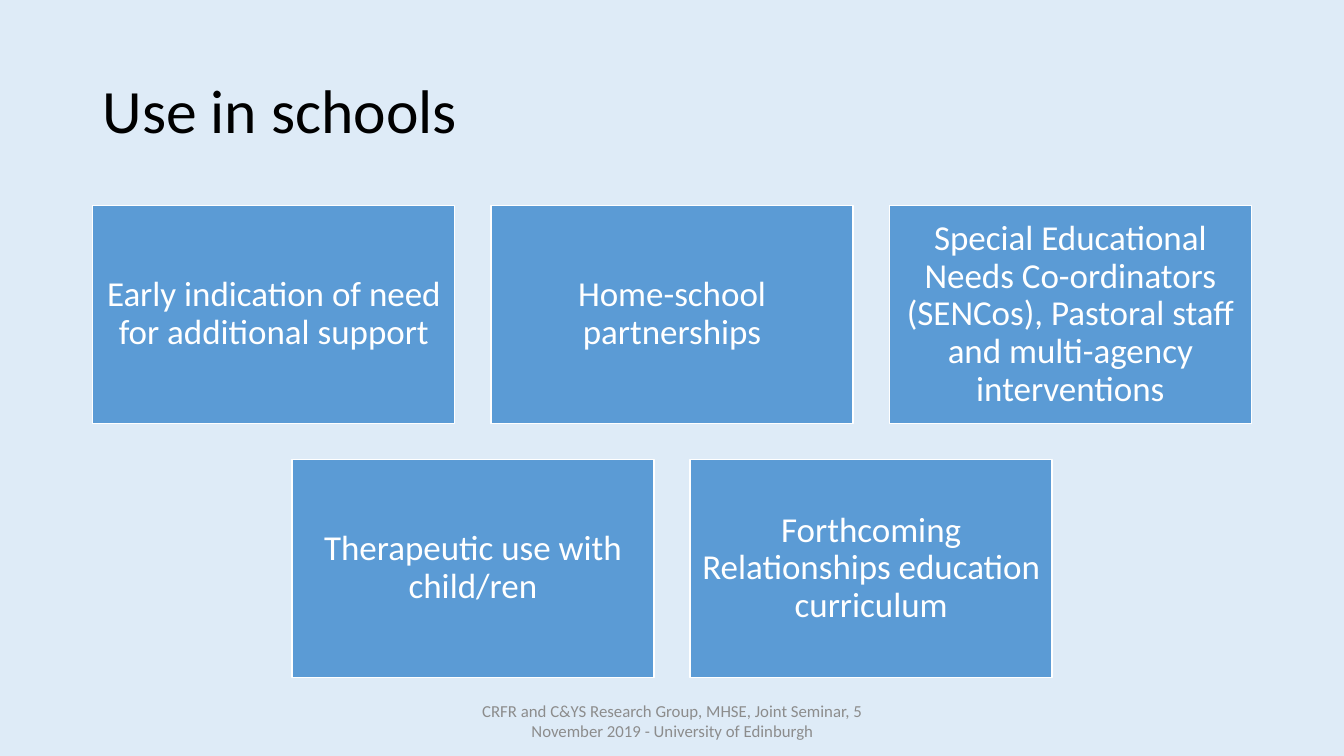
from pptx import Presentation
from pptx.dml.color import RGBColor
from pptx.enum.shapes import MSO_SHAPE
from pptx.enum.text import MSO_ANCHOR, PP_ALIGN
from pptx.util import Inches, Pt

WIDTH, HEIGHT = 13.33, 7.5
CARD_WIDTH, CARD_HEIGHT, GAP = 3.59, 2.16, 0.36
CARDS_TOP = 2.04
CARD_ROWS = [
    [
        "Early indication of need for additional support",
        "Home-school partnerships",
        "Special Educational Needs Co-ordinators (SENCos), Pastoral staff "
        "and multi-agency interventions",
    ],
    [
        "Therapeutic use with child/ren",
        "Forthcoming Relationships education curriculum",
    ],
]
FOOTER = ("CRFR and C&YS Research Group, MHSE, Joint Seminar, 5 November 2019"
          " - University of Edinburgh")


def color(value):
    return RGBColor.from_string(value)


def write(shape, text, size, ink, align=PP_ALIGN.CENTER, spacing=1.0, inset=None):
    frame = shape.text_frame
    frame.word_wrap = True
    frame.vertical_anchor = MSO_ANCHOR.MIDDLE
    if inset is not None:
        frame.margin_left = frame.margin_right = Inches(inset)
        frame.margin_top = frame.margin_bottom = Inches(inset)
    para = frame.paragraphs[0]
    para.alignment = align
    para.line_spacing = spacing
    span = para.add_run()
    span.text = text
    span.font.name = "Calibri"
    span.font.size = Pt(size)
    span.font.color.rgb = color(ink)


def add_text(page, left, top, width, height, text, **style):
    box = page.shapes.add_textbox(*map(Inches, (left, top, width, height)))
    write(box, text, **style)


def add_card(page, left, top, text):
    card = page.shapes.add_shape(
        MSO_SHAPE.RECTANGLE, *map(Inches, (left, top, CARD_WIDTH, CARD_HEIGHT)))
    card.shadow.inherit = False
    card.fill.solid()
    card.fill.fore_color.rgb = color("5B9BD5")
    card.line.color.rgb = color("FFFFFF")
    card.line.width = Pt(1)
    write(card, text, size=25, ink="FFFFFF", spacing=0.9, inset=0.1)


def add_card_rows(page):
    """Place each row of cards centred on the slide."""
    for row, texts in enumerate(CARD_ROWS):
        row_width = len(texts) * (CARD_WIDTH + GAP) - GAP
        left = (WIDTH - row_width) / 2
        top = CARDS_TOP + row * (CARD_HEIGHT + GAP)
        for column, text in enumerate(texts):
            add_card(page, left + column * (CARD_WIDTH + GAP), top, text)


def main():
    deck = Presentation()
    deck.slide_width, deck.slide_height = Inches(WIDTH), Inches(HEIGHT)
    page = deck.slides.add_slide(deck.slide_layouts[6])
    page.background.fill.solid()
    page.background.fill.fore_color.rgb = color("DEEBF7")
    add_text(page, 0.92, 0.4, 11.5, 1.45, "Use in schools",
             size=44, ink="000000", align=PP_ALIGN.LEFT, spacing=0.9)
    add_text(page, 4.42, 6.95, 4.5, 0.4, FOOTER, size=12, ink="8C8C8C")
    add_card_rows(page)
    deck.save("out.pptx")


if __name__ == "__main__":
    main()
